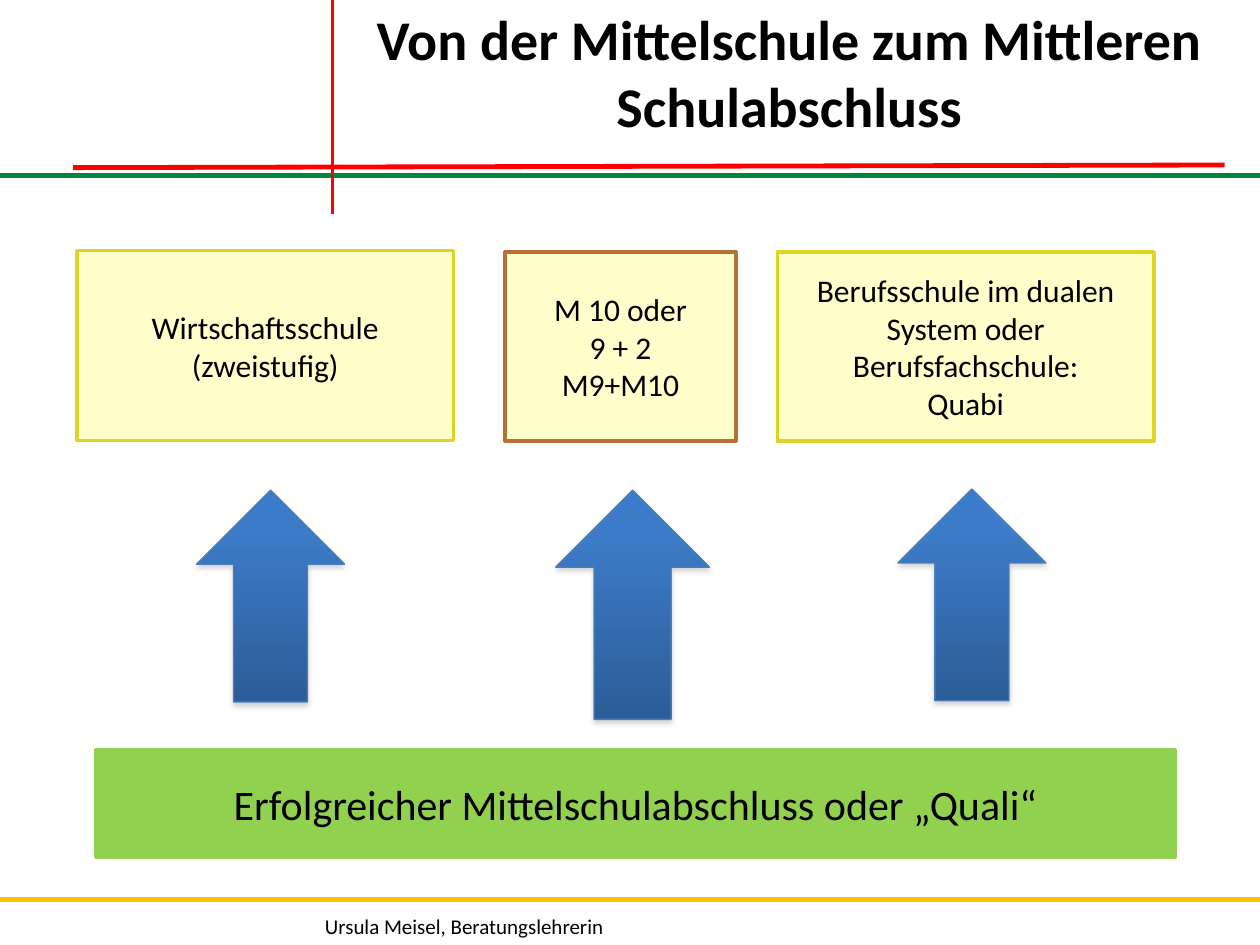
from dataclasses import dataclass

from lxml.etree import SubElement
from pptx import Presentation
from pptx.dml.color import RGBColor
from pptx.enum.shapes import MSO_CONNECTOR, MSO_SHAPE
from pptx.enum.text import MSO_ANCHOR, PP_ALIGN
from pptx.oxml import parse_xml
from pptx.oxml.ns import nsdecls, qn
from pptx.shapes.autoshape import Shape
from pptx.slide import Slide
from pptx.util import Pt

FONT = "Calibri"
BLACK = "000000"
GREEN = "92D050"
CREAM = "FFFFCC"
YELLOW = "DDD423"
BROWN = "B76F34"
RED = "FF0000"


@dataclass
class Area:
    left: float
    top: float
    width: float
    height: float


@dataclass
class Rule:
    start: tuple[float, float]
    end: tuple[float, float]
    color: str
    weight: float


@dataclass
class Box:
    area: Area
    lines: list[str]
    fill: str
    outline: str
    size: float = 18


RULES = [
    Rule((0, 100.1), (720, 100.1), "00863D", 2.75),
    Rule((190.1, 0), (190.1, 122.4), RED, 2),
    Rule((0, 514.1), (720, 514.1), "FFC000", 2.75),
    Rule((41.8, 95.8), (699.8, 94.3), RED, 2.75),
]
BOXES = [
    Box(Area(54.7, 428.4, 617, 61.2),
        ["Erfolgreicher Mittelschulabschluss oder „Quali“"], GREEN, GREEN, 24),
    Box(Area(43.9, 143.3, 215.3, 108.5),
        ["Wirtschaftsschule (zweistufig)"], CREAM, YELLOW),
    Box(Area(444.2, 144, 215.3, 108),
        ["Berufsschule im dualen System oder Berufsfachschule:", "Quabi"], CREAM, YELLOW),
    Box(Area(288.7, 144, 131.8, 108),
        ["M 10 oder", "9 + 2", "M9+M10"], CREAM, BROWN),
]
ARROWS = [
    Area(112.3, 280.1, 84.6, 121),
    Area(513.1, 279.4, 84.6, 121),
    Area(317.5, 280.1, 88, 131),
]
ARROW_STOPS = [(0, "3A7CCB"), (20, "3C7BC7"), (100, "2C5D98")]


def rgb(value: str) -> RGBColor:
    return RGBColor.from_string(value)


def lengths(area: Area) -> tuple[Pt, Pt, Pt, Pt]:
    return Pt(area.left), Pt(area.top), Pt(area.width), Pt(area.height)


def write_lines(shape: Shape, lines: list[str], size: float, bold: bool = False,
                alignment: PP_ALIGN = PP_ALIGN.CENTER,
                anchor: MSO_ANCHOR = MSO_ANCHOR.MIDDLE) -> None:
    frame = shape.text_frame
    frame.word_wrap = True
    frame.vertical_anchor = anchor
    for index, line in enumerate(lines):
        paragraph = frame.add_paragraph() if index else frame.paragraphs[0]
        paragraph.alignment = alignment
        run = paragraph.add_run()
        run.text = line
        run.font.name = FONT
        run.font.size = Pt(size)
        run.font.bold = bold
        run.font.color.rgb = rgb(BLACK)


def draw_rule(slide: Slide, rule: Rule) -> None:
    connector = slide.shapes.add_connector(
        MSO_CONNECTOR.STRAIGHT, *map(Pt, rule.start), *map(Pt, rule.end))
    connector.line.color.rgb = rgb(rule.color)
    connector.line.width = Pt(rule.weight)
    SubElement(connector._element.spPr, qn("a:effectLst"))


def draw_box(slide: Slide, box: Box) -> None:
    shape = slide.shapes.add_shape(MSO_SHAPE.RECTANGLE, *lengths(box.area))
    shape.shadow.inherit = False
    shape.fill.solid()
    shape.fill.fore_color.rgb = rgb(box.fill)
    shape.line.color.rgb = rgb(box.outline)
    shape.line.width = Pt(2)
    write_lines(shape, box.lines, box.size)


def draw_arrow(slide: Slide, area: Area) -> None:
    """Draw an up arrow with a vertical gradient and a soft shadow below."""
    shape = slide.shapes.add_shape(MSO_SHAPE.UP_ARROW, *lengths(area))
    shape.line.color.rgb = rgb("4A7EBB")
    shape.line.width = Pt(0.75)
    stops = "".join(
        f'<a:gs pos="{position * 1000}"><a:srgbClr val="{color}"/></a:gs>'
        for position, color in ARROW_STOPS)
    properties = shape._element.spPr
    properties.find(qn("a:prstGeom")).addnext(parse_xml(
        f'<a:gradFill {nsdecls("a")} rotWithShape="1"><a:gsLst>{stops}</a:gsLst>'
        '<a:lin ang="5400000" scaled="0"/></a:gradFill>'))
    properties.append(parse_xml(
        f'<a:effectLst {nsdecls("a")}><a:outerShdw blurRad="{Pt(3.1)}" '
        f'dist="{Pt(1.8)}" dir="5400000" rotWithShape="0"><a:srgbClr val="808080">'
        '<a:alpha val="35000"/></a:srgbClr></a:outerShdw></a:effectLst>'))


def main() -> None:
    presentation = Presentation()
    presentation.slide_width = Pt(720)
    presentation.slide_height = Pt(540)
    slide = presentation.slides.add_slide(presentation.slide_layouts[6])

    for rule in RULES:
        draw_rule(slide, rule)
    footer = slide.shapes.add_textbox(*lengths(Area(178.6, 518.4, 244, 21.6)))
    write_lines(footer, ["Ursula Meisel, Beratungslehrerin"], 12,
                alignment=PP_ALIGN.LEFT, anchor=MSO_ANCHOR.TOP)
    title = slide.shapes.add_textbox(*lengths(Area(201.6, 5, 499, 72)))
    write_lines(title, ["Von der Mittelschule zum Mittleren Schulabschluss"], 32, bold=True)
    for box in BOXES:
        draw_box(slide, box)
    for area in ARROWS:
        draw_arrow(slide, area)

    presentation.save("out.pptx")


if __name__ == "__main__":
    main()
